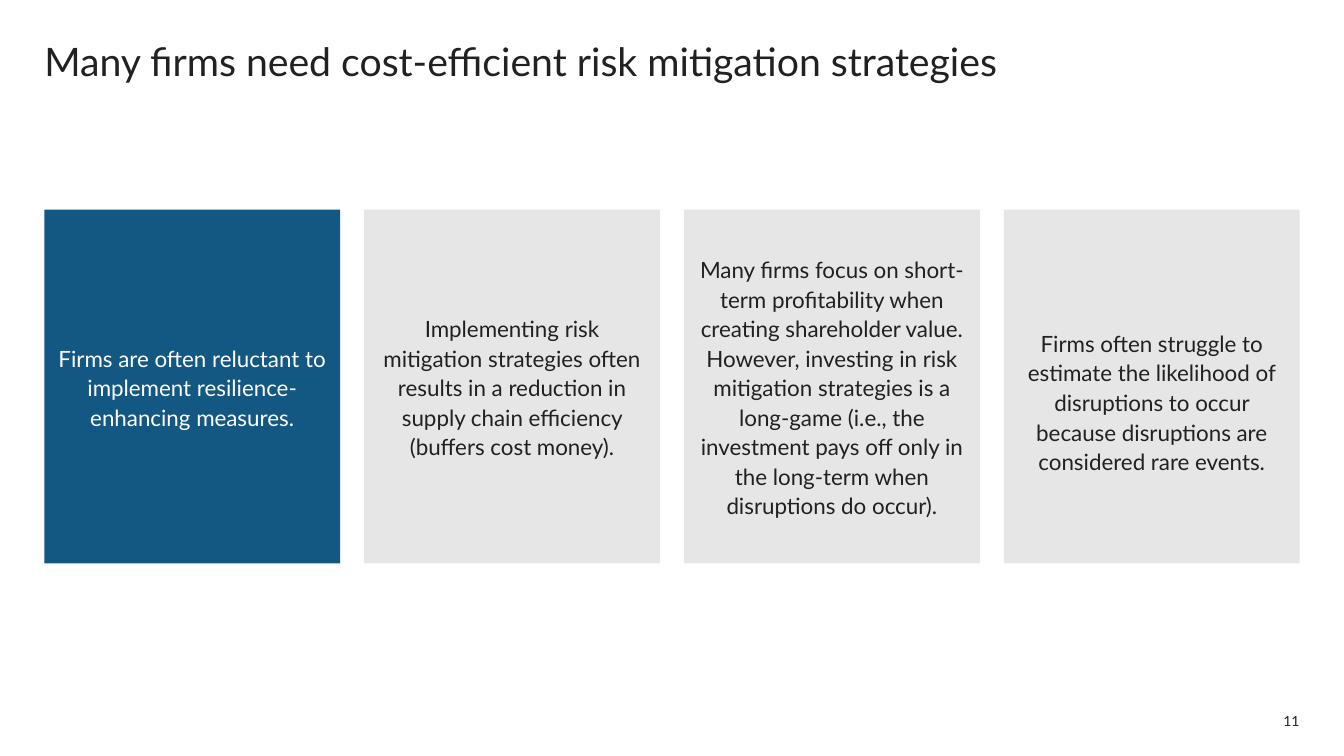
from dataclasses import dataclass

from pptx import Presentation
from pptx.dml.color import RGBColor
from pptx.enum.shapes import MSO_SHAPE
from pptx.enum.text import MSO_ANCHOR, MSO_AUTO_SIZE, PP_ALIGN
from pptx.slide import Slide
from pptx.text.text import TextFrame
from pptx.util import Inches, Pt


@dataclass(frozen=True)
class Theme:
    """Colours, font and type sizes of the slide."""

    font: str = "Lato"
    ink: str = "212121"
    white: str = "FFFFFF"
    blue: str = "135783"
    grey: str = "E6E6E6"
    title_size: int = 28
    body_size: int = 16
    number_size: int = 10


@dataclass(frozen=True)
class Grid:
    """Equal columns between the side margins, in inches."""

    slide_width: float = 13.33
    slide_height: float = 7.5
    margin: float = 0.44
    gap: float = 0.24
    columns: int = 4
    card_top: float = 2.08
    card_height: float = 3.51

    @property
    def content_width(self) -> float:
        """Return the width between the margins."""
        return self.slide_width - 2 * self.margin

    @property
    def column_width(self) -> float:
        """Return the width of one column."""
        return (self.content_width - (self.columns - 1) * self.gap) / self.columns

    def left(self, column: int) -> float:
        """Return the left edge of a column."""
        return self.margin + column * (self.column_width + self.gap)


THEME = Theme()
GRID = Grid()


@dataclass(frozen=True)
class Card:
    """One filled box with its statement."""

    text: str
    fill: str = THEME.grey
    color: str = THEME.ink
    top_inset: float = 0.05


CARDS = (
    Card(
        "Firms are often reluctant to implement resilience-enhancing measures.",
        fill=THEME.blue,
        color=THEME.white,
    ),
    Card(
        "Implementing risk mitigation strategies often results in a reduction in "
        "supply chain efficiency (buffers cost money)."
    ),
    Card(
        "Many firms focus on short-term profitability when creating shareholder value. "
        "However, investing in risk mitigation strategies is a long-game (i.e., the "
        "investment pays off only in the long-term when disruptions do occur)."
    ),
    Card(
        "Firms often struggle to estimate the likelihood of disruptions to occur "
        "because disruptions are considered rare events.",
        top_inset=0.34,
    ),
)


def write_text(
    frame: TextFrame,
    text: str,
    *,
    size: int,
    color: str = THEME.ink,
    align: PP_ALIGN = PP_ALIGN.LEFT,
    anchor: MSO_ANCHOR = MSO_ANCHOR.MIDDLE,
    line_spacing: float = 1.0,
    insets: tuple[float, float, float, float] = (0, 0, 0, 0),
    wrap: bool = True,
    auto_size: MSO_AUTO_SIZE = MSO_AUTO_SIZE.SHAPE_TO_FIT_TEXT,
) -> None:
    """Write one formatted paragraph into a text frame."""
    frame.text = text
    frame.word_wrap = wrap
    frame.auto_size = auto_size
    frame.vertical_anchor = anchor
    frame.margin_left, frame.margin_top, frame.margin_right, frame.margin_bottom = map(
        Inches, insets
    )
    paragraph = frame.paragraphs[0]
    paragraph.alignment = align
    paragraph.line_spacing = line_spacing
    paragraph.font.name = THEME.font
    paragraph.font.size = Pt(size)
    paragraph.font.color.rgb = RGBColor.from_string(color)


def add_title(slide: Slide, text: str) -> None:
    """Place and fill the title placeholder."""
    title = slide.shapes.title
    title.left, title.top = Inches(GRID.margin), Inches(0.37)
    title.width, title.height = Inches(GRID.content_width), Inches(0.47)
    write_text(title.text_frame, text, size=THEME.title_size, anchor=MSO_ANCHOR.TOP)


def add_page_number(slide: Slide, number: str) -> None:
    """Add the page number flush with the right margin."""
    side = 0.17
    left = GRID.slide_width - GRID.margin - side
    box = slide.shapes.add_textbox(
        Inches(left), Inches(7.07), Inches(side), Inches(side)
    )
    write_text(
        box.text_frame, number, size=THEME.number_size, align=PP_ALIGN.RIGHT, wrap=False
    )


def add_card(slide: Slide, card: Card, column: int) -> None:
    """Draw one card in its grid column."""
    shape = slide.shapes.add_shape(
        MSO_SHAPE.RECTANGLE,
        Inches(GRID.left(column)),
        Inches(GRID.card_top),
        Inches(GRID.column_width),
        Inches(GRID.card_height),
    )
    shape.shadow.inherit = False
    shape.fill.solid()
    shape.fill.fore_color.rgb = RGBColor.from_string(card.fill)
    shape.line.fill.background()
    write_text(
        shape.text_frame,
        card.text,
        size=THEME.body_size,
        color=card.color,
        align=PP_ALIGN.CENTER,
        line_spacing=1.1,
        insets=(0.1, card.top_inset, 0.1, 0.05),
        auto_size=MSO_AUTO_SIZE.NONE,
    )


def main() -> None:
    """Build and save the slide."""
    presentation = Presentation()
    presentation.slide_width = Inches(GRID.slide_width)
    presentation.slide_height = Inches(GRID.slide_height)
    slide = presentation.slides.add_slide(
        presentation.slide_layouts.get_by_name("Title Only")
    )
    add_title(slide, "Many firms need cost-efficient risk mitigation strategies")
    add_page_number(slide, "11")
    for column, card in enumerate(CARDS):
        add_card(slide, card, column)
    presentation.save("out.pptx")


if __name__ == "__main__":
    main()
